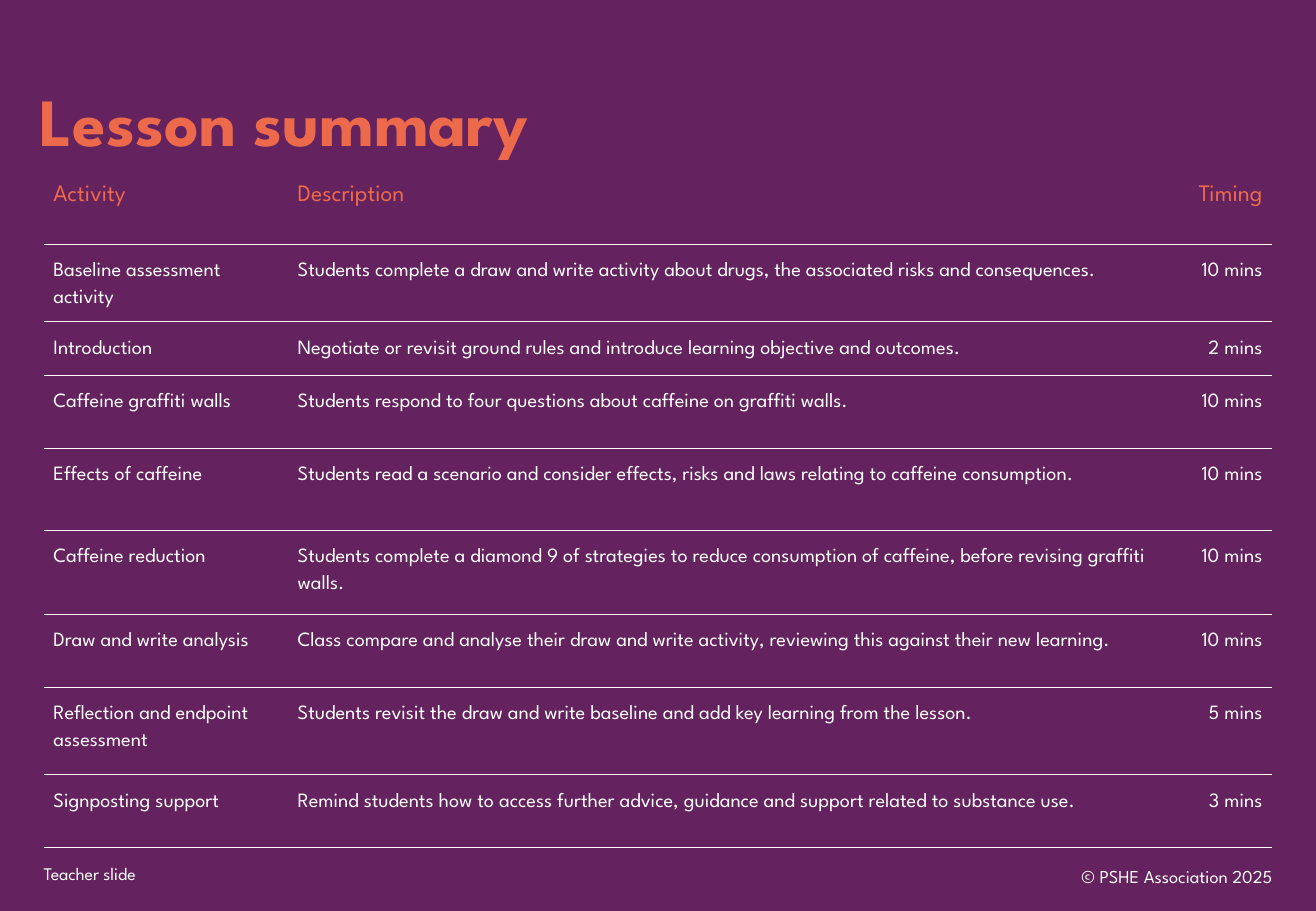
from dataclasses import dataclass

from lxml import etree
from pptx import Presentation
from pptx.dml.color import RGBColor
from pptx.enum.text import MSO_ANCHOR, PP_ALIGN
from pptx.oxml.ns import qn
from pptx.util import Inches, Pt

LEFT, RIGHT = PP_ALIGN.LEFT, PP_ALIGN.RIGHT
TOP, MIDDLE = MSO_ANCHOR.TOP, MSO_ANCHOR.MIDDLE

TITLE = "Lesson summary"
AUDIENCE = "Teacher slide"
COPYRIGHT = "© PSHE Association 2025"
HEADINGS = ("Activity", "Description", "Timing")
ACTIVITIES = [
    ("Baseline assessment activity",
     "Students complete a draw and write activity about drugs, the associated risks and consequences.",
     "10 mins"),
    ("Introduction",
     "Negotiate or revisit ground rules and introduce learning objective and outcomes.",
     "2 mins"),
    ("Caffeine graffiti walls",
     "Students respond to four questions about caffeine on graffiti walls.",
     "10 mins"),
    ("Effects of caffeine",
     "Students read a scenario and consider effects, risks and laws relating to caffeine consumption.",
     "10 mins"),
    ("Caffeine reduction",
     "Students complete a diamond 9 of strategies to reduce consumption of caffeine, "
     "before revising graffiti walls.",
     "10 mins"),
    ("Draw and write analysis",
     "Class compare and analyse their draw and write activity, reviewing this against their new learning.",
     "10 mins"),
    ("Reflection and endpoint assessment",
     "Students revisit the draw and write baseline and add key learning from the lesson.",
     "5 mins"),
    ("Signposting support",
     "Remind students how to access further advice, guidance and support related to substance use.",
     "3 mins"),
]
COLUMN_WIDTHS = (1.93, 7.41, 0.77)
ROW_HEIGHTS = (0.57, 0.64, 0.44, 0.6, 0.68, 0.69, 0.6, 0.72, 0.6)
COLUMN_INSETS = (0.08, 0.16, 0.08)
COLUMN_ALIGNMENTS = (LEFT, LEFT, RIGHT)


@dataclass(frozen=True)
class Theme:
    font: str = "League Spartan"
    background: str = "64235E"
    accent: str = "ED694B"
    text: str = "FFFFFF"
    title_size: float = 40
    heading_size: float = 14
    body_size: float = 12
    audience_size: float = 10.5
    copyright_size: float = 10.8
    body_leading: float = 16
    rule_width: float = 0.5


THEME = Theme()


def write(paragraph, text, size, color, alignment=LEFT, bold=False):
    paragraph.alignment = alignment
    run = paragraph.add_run()
    run.text = text
    run.font.name = THEME.font
    run.font.size = Pt(size)
    run.font.bold = bold
    run.font.color.rgb = RGBColor.from_string(color)


def add_text(slide, box, text, size, color, anchor=TOP, alignment=LEFT, bold=False):
    shape = slide.shapes.add_textbox(*map(Inches, box))
    frame = shape.text_frame
    frame.word_wrap = True
    frame.vertical_anchor = anchor
    paragraph = frame.paragraphs[0]
    write(paragraph, text, size, color, alignment, bold)
    return paragraph


def set_borders(cell, ruled_sides):
    """Rule the named sides (T, B) and clear the others."""
    properties = cell._tc.get_or_add_tcPr()
    for position, side in enumerate("LRTB"):
        line = etree.Element(qn(f"a:ln{side}"), w=str(Pt(THEME.rule_width)))
        if side in ruled_sides:
            fill = etree.SubElement(line, qn("a:solidFill"))
            etree.SubElement(fill, qn("a:srgbClr"), val=THEME.text)
        else:
            etree.SubElement(line, qn("a:noFill"))
        properties.insert(position, line)


def fill_cell(cell, text, column, is_heading):
    cell.fill.background()
    cell.margin_left = Inches(COLUMN_INSETS[column])
    cell.margin_right = cell.margin_top = cell.margin_bottom = Inches(0.08)
    paragraph = cell.text_frame.paragraphs[0]
    if is_heading:
        size, color = THEME.heading_size, THEME.accent
    else:
        size, color = THEME.body_size, THEME.text
        paragraph.line_spacing = Pt(THEME.body_leading)
    write(paragraph, text, size, color, COLUMN_ALIGNMENTS[column])
    set_borders(cell, "B" if is_heading else "TB")


def add_summary_table(slide):
    rows = [HEADINGS, *ACTIVITIES]
    frame = slide.shapes.add_table(
        len(rows), len(HEADINGS), Inches(0.36), Inches(1.44),
        Inches(sum(COLUMN_WIDTHS)), Inches(sum(ROW_HEIGHTS)))
    table = frame.table
    table.horz_banding = False
    for column, width in zip(table.columns, COLUMN_WIDTHS):
        column.width = Inches(width)
    for row, height in zip(table.rows, ROW_HEIGHTS):
        row.height = Inches(height)
    for row_index, texts in enumerate(rows):
        for column_index, text in enumerate(texts):
            fill_cell(table.cell(row_index, column_index), text, column_index, row_index == 0)


def main():
    presentation = Presentation()
    presentation.slide_width = Inches(10.83)
    presentation.slide_height = Inches(7.5)
    slide = presentation.slides.add_slide(presentation.slide_layouts[6])
    slide.background.fill.solid()
    slide.background.fill.fore_color.rgb = RGBColor.from_string(THEME.background)

    add_text(slide, (0.26, 7.05, 6.78, 0.29), AUDIENCE, THEME.audience_size, THEME.text)
    title = add_text(slide, (0.23, 0.65, 8.2, 0.76), TITLE, THEME.title_size,
                     THEME.accent, MIDDLE, bold=True)
    title.line_spacing = 0.9
    add_summary_table(slide)
    add_text(slide, (8.13, 7.01, 2.44, 0.4), COPYRIGHT, THEME.copyright_size,
             THEME.text, MIDDLE, RIGHT)
    presentation.save("out.pptx")


if __name__ == "__main__":
    main()
